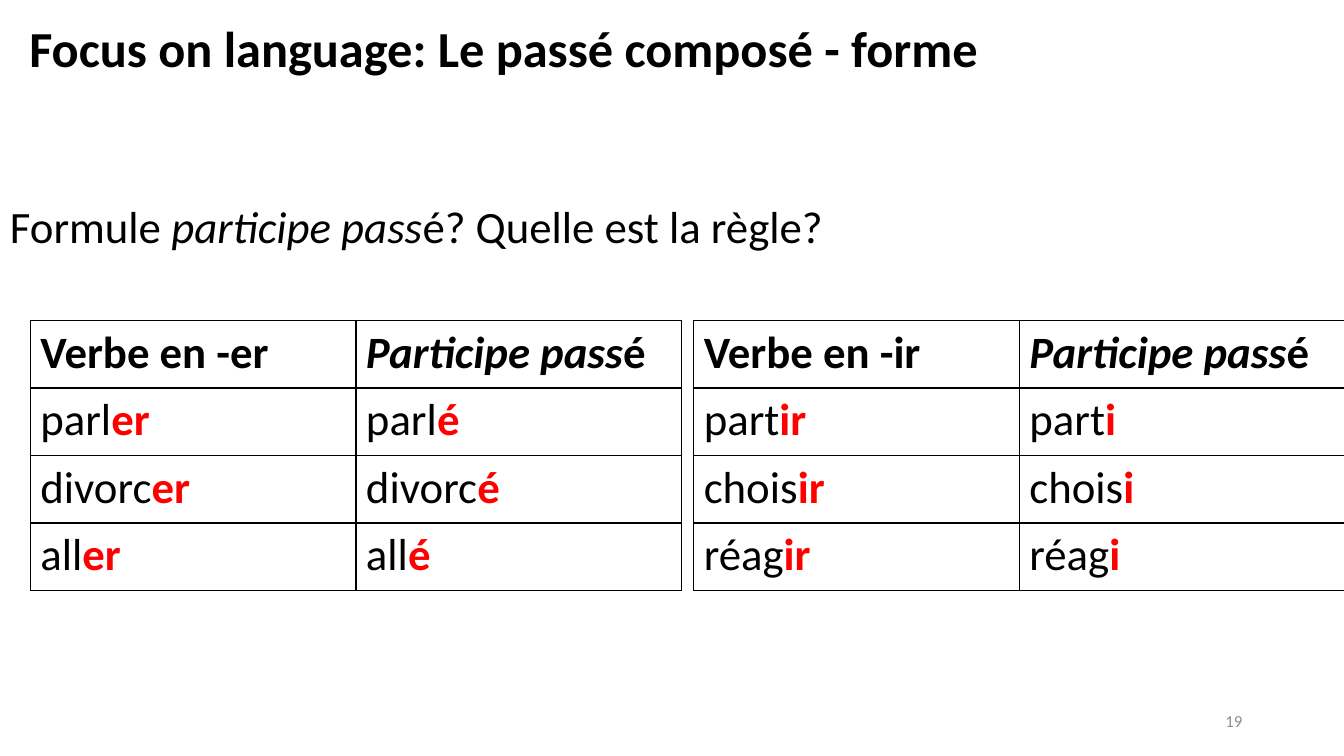
import pptx
import pptx.util
import pptx.dml.color
import pptx.enum.text
import pptx.oxml
import pptx.oxml.ns

COLOURS = {"text": "000000", "ending": "FF0000", "number": "8C8C8C", "border": "000000"}
SLIDE_SIZE = (1333, 750)
TABLE_TOP, COLUMN_WIDTH, ROW_HEIGHT = 318, 323, 67
VERB_GROUPS = [
    (30, "er", "é", ["parl", "divorc", "all"]),
    (688, "ir", "i", ["part", "chois", "réag"]),
]


def px(length):
    return pptx.util.Emu(length * 9144)


class SlideBuilder:
    """Holds the lesson style and the current slide."""

    font = "Calibri"

    def __init__(self, slide):
        self.slide = slide

    def add_runs(self, paragraph, segments, size=32, bold=False, colour="text"):
        for text, mark in segments:
            run = paragraph.add_run()
            run.text = text
            run.font.name = self.font
            run.font.size = pptx.util.Pt(size)
            run.font.bold = bold or mark == "ending"
            run.font.italic = mark == "italic"
            name = "ending" if mark == "ending" else colour
            run.font.color.rgb = pptx.dml.color.RGBColor.from_string(COLOURS[name])

    def title(self, text, left, top, width, height):
        shape = self.slide.shapes.title
        shape.left, shape.top, shape.width, shape.height = map(px, (left, top, width, height))
        frame = shape.text_frame
        frame.vertical_anchor = pptx.enum.text.MSO_ANCHOR.MIDDLE
        frame.auto_size = pptx.enum.text.MSO_AUTO_SIZE.NONE
        paragraph = frame.paragraphs[0]
        paragraph.alignment = pptx.enum.text.PP_ALIGN.LEFT
        paragraph.line_spacing = 0.9
        self.add_runs(paragraph, [(text, "")], size=36, bold=True)

    def text(self, segments, left, top, width, height, size=32, colour="text",
             align=pptx.enum.text.PP_ALIGN.LEFT, anchor=pptx.enum.text.MSO_ANCHOR.TOP):
        shape = self.slide.shapes.add_textbox(*map(px, (left, top, width, height)))
        frame = shape.text_frame
        frame.word_wrap = True
        frame.vertical_anchor = anchor
        frame.paragraphs[0].alignment = align
        self.add_runs(frame.paragraphs[0], segments, size, colour=colour)

    def border(self, cell):
        properties = cell._tc.get_or_add_tcPr()
        for side in ("lnL", "lnR", "lnT", "lnB"):
            properties.append(pptx.oxml.parse_xml(
                f'<a:{side} {pptx.oxml.ns.nsdecls("a")} w="12700"><a:solidFill>'
                f'<a:srgbClr val="{COLOURS["border"]}"/></a:solidFill></a:{side}>'))

    def table(self, rows, left, top, column_width, row_height):
        columns = len(rows[0])
        size = (column_width * columns, row_height * len(rows))
        frame = self.slide.shapes.add_table(len(rows), columns, *map(px, (left, top, *size)))
        table = frame.table
        table.first_row = table.horz_banding = False
        for row_index, row in enumerate(rows):
            for column_index, segments in enumerate(row):
                cell = table.cell(row_index, column_index)
                self.border(cell)
                cell.fill.background()
                self.add_runs(cell.text_frame.paragraphs[0], segments, bold=row_index == 0)


def main():
    presentation = pptx.Presentation()
    presentation.slide_width, presentation.slide_height = map(px, SLIDE_SIZE)
    builder = SlideBuilder(presentation.slides.add_slide(presentation.slide_layouts[5]))

    builder.title("Focus on language: Le passé composé - forme", 19, 27, 1034, 47)
    for left, infinitive, participle, stems in VERB_GROUPS:
        header = [[(f"Verbe en -{infinitive}", "")], [("Participe pass", "italic"), ("é", "")]]
        verbs = [[[(stem, ""), (ending, "ending")] for ending in (infinitive, participle)]
                 for stem in stems]
        builder.table([header] + verbs, left, TABLE_TOP, COLUMN_WIDTH, ROW_HEIGHT)

    question = [("Formule ", ""), ("participe pass", "italic"), ("é? Quelle est la règle?", "")]
    builder.text(question, 0, 192, 1275, 64)
    builder.text([("19", "")], 942, 695, 300, 40, size=12, colour="number",
                 align=pptx.enum.text.PP_ALIGN.RIGHT, anchor=pptx.enum.text.MSO_ANCHOR.MIDDLE)
    presentation.save("out.pptx")


if __name__ == "__main__":
    main()
